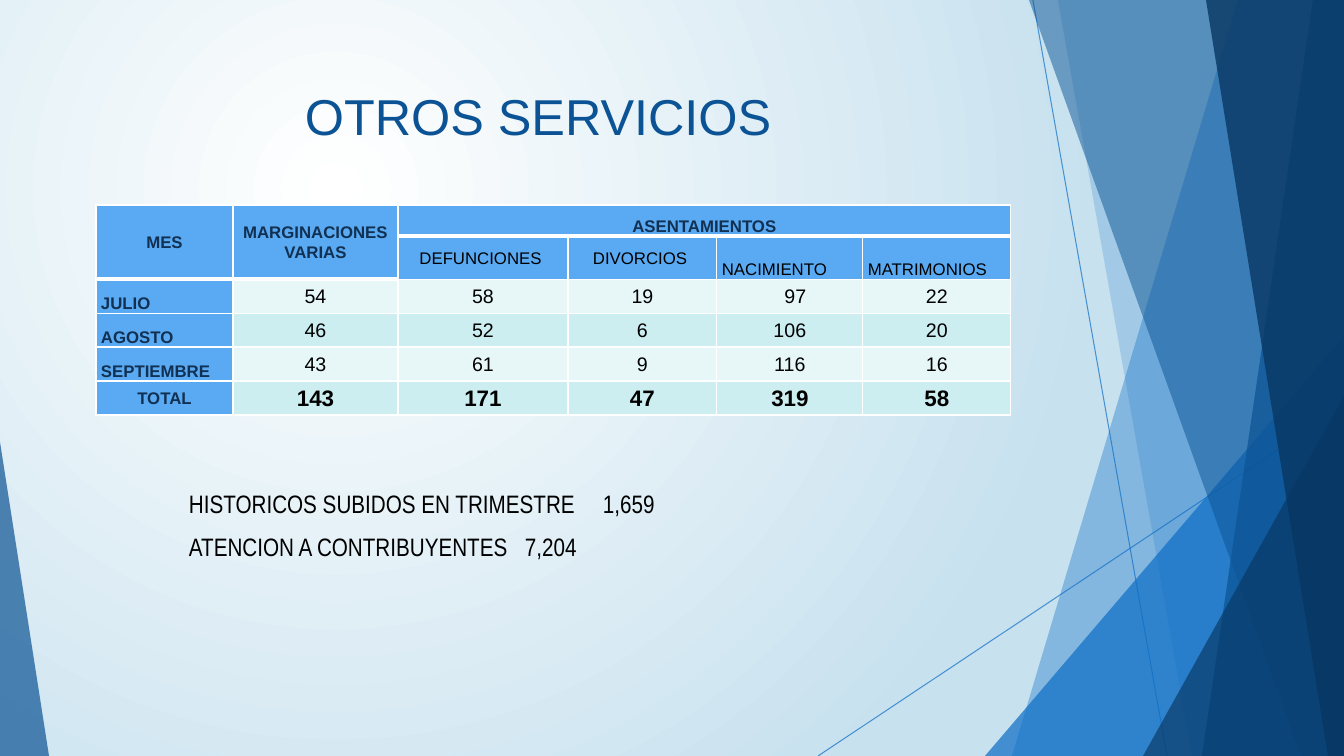
"""Build the OTROS SERVICIOS slide with its quarterly services table."""
from lxml import etree
from pptx import Presentation, util as u
from pptx.dml.color import RGBColor
from pptx.enum import shapes, text
from pptx.oxml import ns

WIDTH, HEIGHT = 1344, 756
SCALE = u.Inches(1) / 100.8
BLUE, NAVY, DARK = "0F6FC6", "0B5394", "083763"
HEADER_FILL, HEADER_TEXT, BLACK, WHITE = "59AAF2", "113052", "000000", "FFFFFF"
BAND_FILLS = ["E7F7F8", "CCEEF1"]

TITLE = "OTROS SERVICIOS"
ROWS = [
    ["MES", "MARGINACIONES VARIAS", "ASENTAMIENTOS", "", "", ""],
    ["", "", "DEFUNCIONES ", "DIVORCIOS ", "NACIMIENTO", "MATRIMONIOS"],
    ["JULIO", "54", "58", "19", "97", "22"],
    ["AGOSTO", "46", "52", "6", "106", "20"],
    ["SEPTIEMBRE", "43", "61", "9", "116", "16"],
    ["TOTAL", "143", "171", "47", "319", "58"],
]
COLUMN_WIDTHS = [137, 165, 170, 149, 146, 148]
ROW_HEIGHTS = [31, 40, 34, 34, 34, 34]
MERGES = [((0, 0), (1, 0)), ((0, 1), (1, 1)), ((0, 2), (0, 5))]
BOTTOM_LEFT_CELLS = [(1, 4), (1, 5), (2, 0), (3, 0), (4, 0)]
NOTES = [("HISTORICOS SUBIDOS EN TRIMESTRE", "1,659", 414),
         ("ATENCION A CONTRIBUYENTES", "7,204", 336)]

LINES = [(1033, 0, 1167, HEIGHT), (WIDTH, 406, 818, HEIGHT)]
DECOR = [
    ("band", (1238, 1012), BLUE, 36),
    ("band", (1058, 1192), BLUE, 20),
    ("wedge", (985, 336, 359, 420, 1), BLUE, 72),
    ("band", (1029, 1301), NAVY, 50),
    ("band", (1313, 1202), NAVY, 70),
    ("band", (1206, 1328), DARK, 80),
    ("wedge", (1143, 396, 201, 360, 1), DARK, 66),
    ("wedge", (0, 442, 49, 314, 0), NAVY, 70),
]


def px(length):
    return u.Emu(round(length * SCALE))


def rgb(color):
    return RGBColor.from_string(color)


def add_element(parent, tag, **attributes):
    return etree.SubElement(parent, ns.qn(tag), attributes)


def set_alpha(properties, percent):
    color = next(properties.iter(ns.qn("a:srgbClr")))
    add_element(color, "a:alpha", val=str(percent * 1000))


def set_font(paragraph, size, color, bold=False, name="Arial"):
    font = paragraph.font
    font.name, font.size, font.bold = name, u.Pt(size), bold
    font.color.rgb = rgb(color)


def paint_background(slide):
    fill = slide.background.fill
    fill.gradient()
    for stop, color in zip(fill.gradient_stops, (WHITE, "C7E1EE")):
        stop.color.rgb = rgb(color)
    linear = next(slide.element.iter(ns.qn("a:lin")))
    gradient = linear.getparent()
    gradient.remove(linear)
    circle = add_element(gradient, "a:path", path="circle")
    add_element(circle, "a:fillToRect", l="50000", t="50000", r="100000", b="100000")


def add_decor(slide):
    for ends in LINES:
        line = slide.shapes.add_connector(shapes.MSO_CONNECTOR.STRAIGHT, *map(px, ends))
        line.line.color.rgb = rgb(BLUE)
        line.line.width = u.Pt(0.75)
        properties = line.element.spPr
        set_alpha(properties, 70)
        add_element(properties, "a:effectLst")
    for kind, geometry, color, alpha in DECOR:
        if kind == "band":
            top_x, bottom_x = geometry
            builder = slide.shapes.build_freeform(top_x, 0, scale=SCALE)
            builder.add_line_segments([(WIDTH, 0), (WIDTH, HEIGHT), (bottom_x, HEIGHT)])
            shape = builder.convert_to_shape()
        else:
            *box, apex = geometry
            shape = slide.shapes.add_shape(
                shapes.MSO_SHAPE.ISOSCELES_TRIANGLE, *map(px, box))
            shape.adjustments[0] = apex
        shape.shadow.inherit = False
        shape.line.fill.background()
        shape.fill.solid()
        shape.fill.fore_color.rgb = rgb(color)
        set_alpha(shape.element.spPr, alpha)


def add_text_frame(slide, *box):
    frame = slide.shapes.add_textbox(*map(px, box)).text_frame
    frame.word_wrap = True
    return frame


def add_title(slide):
    frame = add_text_frame(slide, 295, 76, 553, 86)
    frame.vertical_anchor = text.MSO_ANCHOR.MIDDLE
    paragraph = frame.paragraphs[0]
    paragraph.text = TITLE
    paragraph.line_spacing = 0.9
    set_font(paragraph, 36, NAVY)


def add_notes(slide):
    frame = add_text_frame(slide, 179, 481, 566, 85)
    for index, (label, value, tab) in enumerate(NOTES):
        paragraph = frame.add_paragraph() if index else frame.paragraphs[0]
        paragraph.text = f"{label}\t{value}"
        paragraph.line_spacing = 1.07
        paragraph.space_after = u.Pt(8)
        tabs = add_element(paragraph._p.get_or_add_pPr(), "a:tabLst")
        add_element(tabs, "a:tab", pos=str(px(tab)), algn="l")
        set_font(paragraph, 18, BLACK, name="Arial Narrow")


def add_borders(cell, bottom_width):
    properties = cell._tc.get_or_add_tcPr()
    for side, width in zip("LRTB", (1, 1, 1, bottom_width)):
        border = add_element(properties, f"a:ln{side}", w=str(u.Pt(width)))
        fill = add_element(border, "a:solidFill")
        add_element(fill, "a:srgbClr", val=WHITE)


def cell_style(row, column):
    if row == 0 or column == 0:
        return HEADER_FILL, 12, HEADER_TEXT, True
    if row == 1:
        return HEADER_FILL, 12, BLACK, False
    total = row == len(ROWS) - 1
    return BAND_FILLS[row % 2], 16 if total else 14, BLACK, total


def add_services_table(slide):
    frame = slide.shapes.add_table(
        len(ROWS), len(COLUMN_WIDTHS), px(96), px(205),
        px(sum(COLUMN_WIDTHS)), px(sum(ROW_HEIGHTS)))
    table = frame.table
    table.first_row = table.horz_banding = False
    for column, width in zip(table.columns, COLUMN_WIDTHS):
        column.width = px(width)
    for row, height in zip(table.rows, ROW_HEIGHTS):
        row.height = px(height)
    for first, last in MERGES:
        table.cell(*first).merge(table.cell(*last))
    for row, values in enumerate(ROWS):
        for column, value in enumerate(values):
            cell = table.cell(row, column)
            fill, size, color, bold = cell_style(row, column)
            at_bottom_left = (row, column) in BOTTOM_LEFT_CELLS
            at_bottom = at_bottom_left or (row, column) == (0, 2)
            add_borders(cell, 3 if row == 0 or (row == 1 and column < 2) else 1)
            cell.fill.solid()
            cell.fill.fore_color.rgb = rgb(fill)
            cell.margin_left = cell.margin_right = px(5)
            cell.margin_top = cell.margin_bottom = 0
            cell.vertical_anchor = (
                text.MSO_ANCHOR.BOTTOM if at_bottom else text.MSO_ANCHOR.MIDDLE)
            paragraph = cell.text_frame.paragraphs[0]
            paragraph.text = value
            paragraph.line_spacing = 1.07
            paragraph.alignment = (
                text.PP_ALIGN.LEFT if at_bottom_left else text.PP_ALIGN.CENTER)
            set_font(paragraph, size, color, bold)
    table.cell(2, 4).margin_left = px(16)


def main():
    presentation = Presentation()
    presentation.slide_width, presentation.slide_height = px(WIDTH), px(HEIGHT)
    slide = presentation.slides.add_slide(presentation.slide_layouts[6])
    paint_background(slide)
    add_decor(slide)
    add_title(slide)
    add_services_table(slide)
    add_notes(slide)
    presentation.save("out.pptx")


if __name__ == "__main__":
    main()
